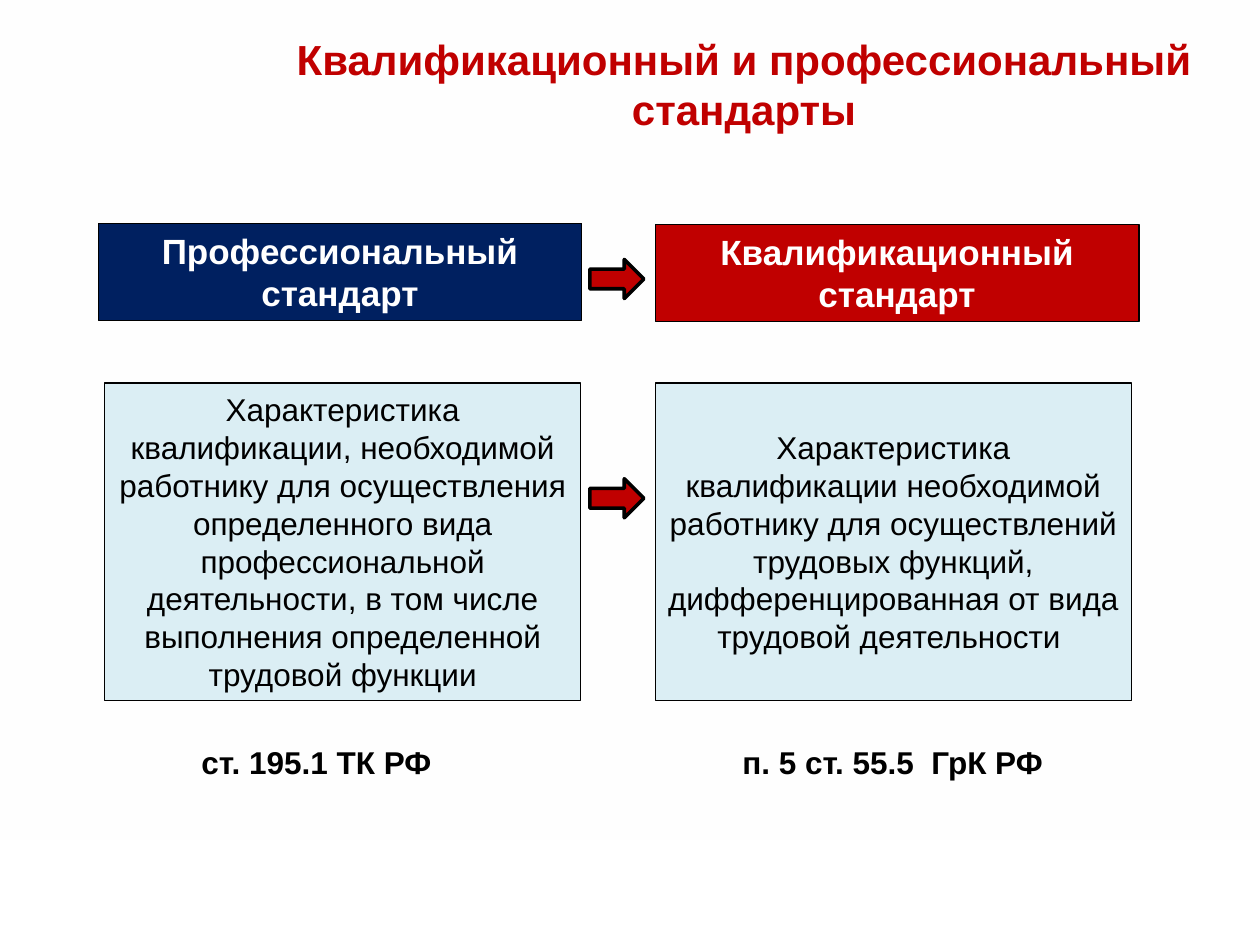
from pptx import Presentation
from pptx.dml.color import RGBColor
from pptx.enum.shapes import MSO_SHAPE
from pptx.enum.text import MSO_ANCHOR, PP_ALIGN
from pptx.util import Cm, Pt

PAPER = RGBColor(0xFE, 0xFE, 0xFE)
WHITE = RGBColor(0xFF, 0xFF, 0xFF)
BLACK = RGBColor(0, 0, 0)
RED = RGBColor(0xC0, 0, 0)
NAVY = RGBColor(0, 0x20, 0x60)
PALE = RGBColor(0xDB, 0xEE, 0xF4)


class Page:
    """Hold the text style and the current slide."""

    def __init__(self, slide):
        self.slide = slide
        self.font = {"name": "Arial", "size": Pt(18), "bold": False}

    def letter(self, shape, text, color, space=None, wrap=True, **style):
        frame = shape.text_frame
        frame.word_wrap = wrap
        frame.vertical_anchor = MSO_ANCHOR.MIDDLE
        para = frame.paragraphs[0]
        for key, value in {"alignment": PP_ALIGN.CENTER, "line_spacing": space}.items():
            setattr(para, key, value)
        run = para.add_run()
        run.text = text
        for key, value in {**self.font, **style}.items():
            setattr(run.font, key, value)
        run.font.color.rgb = color

    def shape(self, kind, area, fill, width=None):
        shape = self.slide.shapes.add_shape(kind, *map(Cm, area))
        shape.shadow.inherit = False
        shape.fill.solid()
        shape.fill.fore_color.rgb = fill
        if width:
            shape.line.color.rgb = BLACK
            shape.line.width = Pt(width)
        else:
            shape.line.fill.background()
        return shape

    def panel(self, area, fill):
        self.shape(MSO_SHAPE.RECTANGLE, area, fill)

    def box(self, area, fill, text, color, **style):
        shape = self.shape(MSO_SHAPE.RECTANGLE, area, fill, 0.75)
        self.letter(shape, text, color, **style)

    def label(self, area, text, color, **style):
        shape = self.slide.shapes.add_textbox(*map(Cm, area))
        self.letter(shape, text, color, bold=True, **style)

    def arrow(self, top):
        self.shape(MSO_SHAPE.RIGHT_ARROW, (11.89, top, 1.09, 0.79), RED, 2)


def main():
    deck = Presentation()
    deck.slide_width, deck.slide_height = Cm(25.4), Cm(19.05)
    page = Page(deck.slides.add_slide(deck.slide_layouts[6]))

    page.panel((0, 0, 25.4, 16.92), PAPER)
    page.label((4.5, 0.53, 21, 2.31),
               "Квалификационный и профессиональный стандарты", RED, size=Pt(24))

    bodies = [
        (2.11, "Характеристика квалификации, необходимой работнику для "
               "осуществления определенного вида профессиональной деятельности, "
               "в том числе выполнения определенной трудовой функции"),
        (13.21, "Характеристика квалификации необходимой работнику для "
                "осуществлений трудовых функций, дифференцированная от вида "
                "трудовой деятельности "),
    ]
    for left, text in bodies:
        page.box((left, 7.72, 9.6, 6.4), PALE, text, BLACK)

    heads = [
        (1.98, 4.5, NAVY, "Профессиональный стандарт"),
        (13.21, 4.52, RED, "Квалификационный стандарт"),
    ]
    for left, top, fill, text in heads:
        page.box((left, top, 9.75, 1.96), fill, text, WHITE, size=Pt(20), bold=True)

    laws = [
        (14.68, 6.63, "п. 5 ст. 55.5  ГрК РФ", False),
        (0.03, 12.7, "ст. 195.1 ТК РФ", True),
    ]
    for left, width, text, wrap in laws:
        page.label((left, 14.83, width, 1.02), text, BLACK, space=1.07, wrap=wrap)

    for top in (5.23, 9.65):
        page.arrow(top)

    deck.save("out.pptx")


if __name__ == "__main__":
    main()
